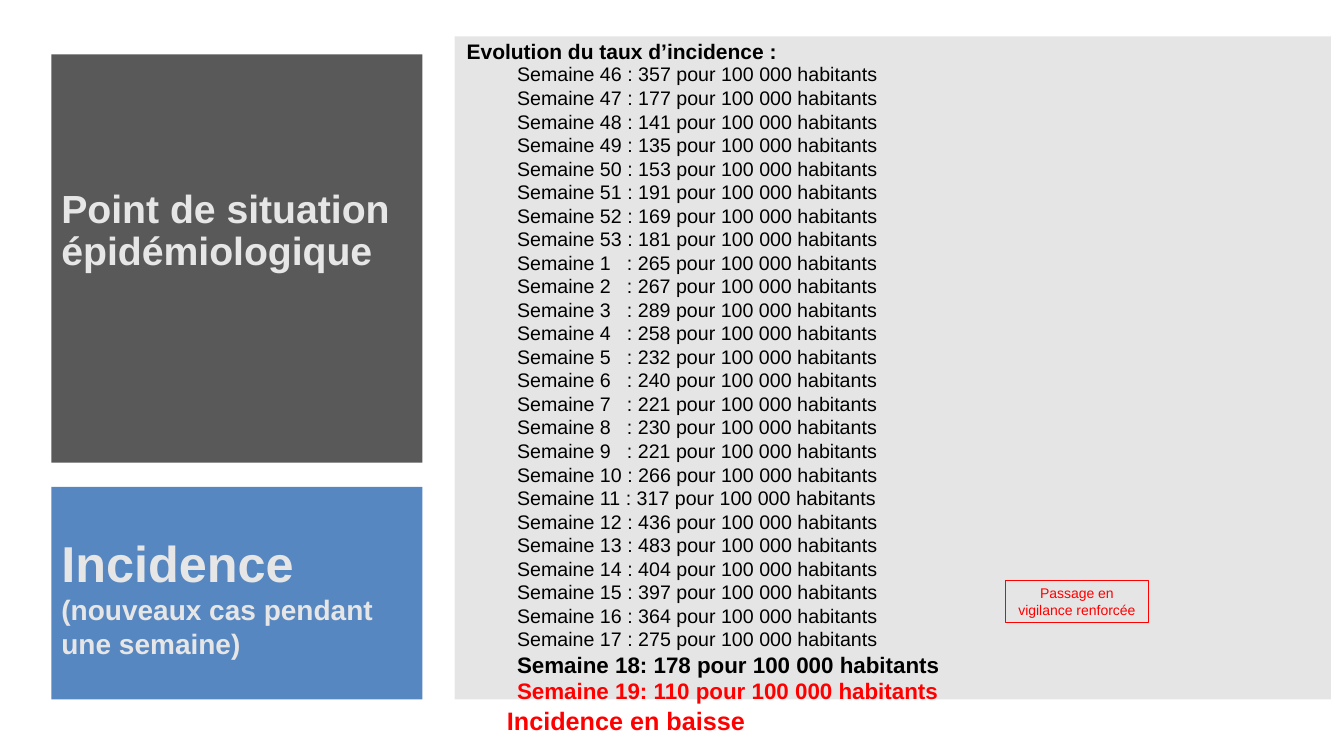
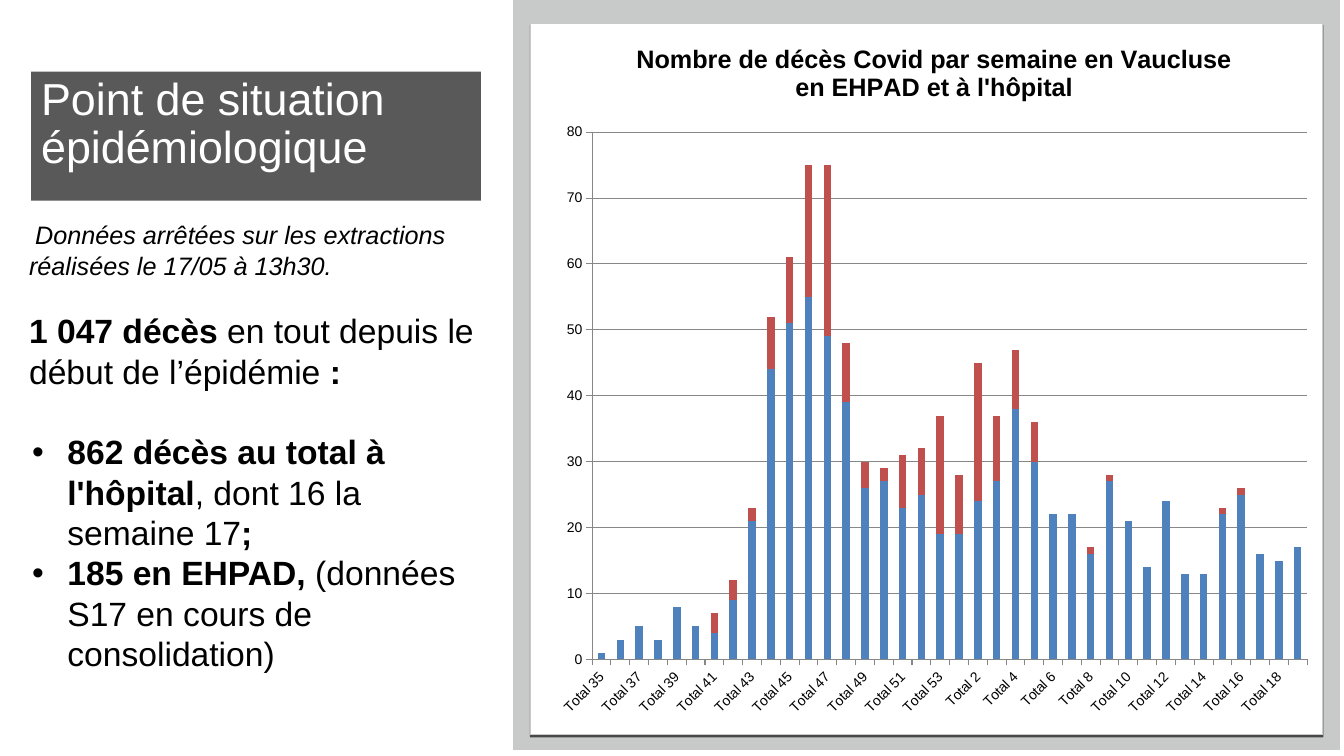
from dataclasses import dataclass

from lxml import etree
from pptx import Presentation
from pptx.chart.data import CategoryChartData
from pptx.dml.color import RGBColor
from pptx.enum.chart import XL_CHART_TYPE as ChartType, XL_TICK_MARK as TickMark
from pptx.enum.shapes import MSO_SHAPE as Preset
from pptx.enum.text import MSO_ANCHOR as Anchor, PP_ALIGN as Align
from pptx.oxml import parse_xml
from pptx.oxml.ns import nsdecls, qn
from pptx.util import Inches, Pt


@dataclass(frozen=True)
class Theme:
    font: str = "Arial"
    black: str = "000000"
    white: str = "FFFFFF"
    dark: str = "595959"
    pale: str = "E7E6E6"
    blue: str = "4F81BD"
    brick: str = "C0504D"
    red: str = "FF0000"
    gray: str = "808080"
    frame: str = "C8CACA"
    axis: str = "878787"
    huge: int = 36
    title: int = 32
    heading: int = 28
    body: int = 24
    subtitle: int = 20
    note: int = 18
    strong: int = 16
    lead: int = 15
    item: int = 14
    small: int = 10
    leading: float = 1.2
    title_spacing: float = 0.9


THEME = Theme()
TITLE = "Point de situation épidémiologique"

# Weekly incidence per 100 000 inhabitants
INCIDENCE = {
    46: 357, 47: 177, 48: 141, 49: 135, 50: 153, 51: 191, 52: 169, 53: 181,
    1: 265, 2: 267, 3: 289, 4: 258, 5: 232, 6: 240, 7: 221, 8: 230, 9: 221,
    10: 266, 11: 317, 12: 436, 13: 483, 14: 404, 15: 397, 16: 364, 17: 275,
    18: 178, 19: 110,
}
# Weekly deaths, from week 35 to week 19
WEEKS = [*range(35, 54), *range(1, 20)]
HOSPITAL = [1, 3, 5, 3, 8, 5, 4, 9, 21, 44, 51, 55, 49, 39, 26, 27, 23, 25, 19,
            19, 24, 27, 38, 30, 22, 22, 16, 27, 21, 14, 24, 13, 13, 22, 25, 16, 15, 17]
CARE_HOMES = {41: 3, 42: 3, 43: 2, 44: 8, 45: 10, 46: 20, 47: 26, 48: 9, 49: 4,
              50: 2, 51: 8, 52: 7, 53: 18, 1: 9, 2: 21, 3: 10, 4: 9, 5: 6,
              8: 1, 9: 1, 15: 1, 16: 1}


def color(code):
    return RGBColor.from_string(code)


def set_font(font, size, code=THEME.black, bold=None, italic=None):
    font.name, font.size = THEME.font, Pt(size)
    font.bold, font.italic = bold, italic
    font.color.rgb = color(code)


# Shapes and text
def add_panel(slide, place, fill=None, line=None, opacity=None, preset=Preset.RECTANGLE):
    panel = slide.shapes.add_shape(preset, *map(Inches, place))
    panel.shadow.inherit = False
    if fill:
        panel.fill.solid()
        panel.fill.fore_color.rgb = color(fill)
    else:
        panel.fill.background()
    if opacity:
        code = panel.fill._xPr.find(qn("a:solidFill"))[0]
        etree.SubElement(code, qn("a:alpha"), val=str(opacity * 1000))
    if line:
        panel.line.color.rgb = color(line)
        panel.line.width = Pt(0.75)
    else:
        panel.line.fill.background()
    return panel


def add_edge_shadow(panel):
    effects = panel._element.spPr.find(qn("a:effectLst"))
    effects.append(parse_xml(
        f'<a:outerShdw {nsdecls("a")} blurRad="0" dist="19050" dir="5400000" algn="t" '
        f'rotWithShape="0"><a:srgbClr val="{THEME.black}"><a:alpha val="63000"/>'
        '</a:srgbClr></a:outerShdw>'))


def add_box(slide, place, anchor=Anchor.TOP):
    box = slide.shapes.add_textbox(*map(Inches, place))
    return prepare_frame(box, anchor)


def prepare_frame(shape, anchor):
    frame = shape.text_frame
    frame.word_wrap = True
    frame.vertical_anchor = anchor
    return frame


def next_paragraph(frame):
    first = frame.paragraphs[0]
    return frame.add_paragraph() if first.runs else first


def write(frame, text, size, code=THEME.black, bold=None, italic=None,
          align=Align.LEFT, spacing=None):
    para = next_paragraph(frame)
    para.alignment = align
    para.line_spacing = spacing
    para.add_run().text = text
    set_font(para.font, size, code, bold, italic)
    return para


def write_mixed(frame, parts, before=0, bullet=False):
    """Parts alternate between bold and regular, starting with bold."""
    para = next_paragraph(frame)
    para.alignment = Align.LEFT
    para.line_spacing = Pt(THEME.body * THEME.leading)
    para.space_before = Pt(before)
    if bullet:
        add_bullet(para)
    set_font(para.font, THEME.body)
    for index, text in enumerate(parts):
        span = para.add_run()
        span.text = text
        span.font.bold = index % 2 == 0


def set_indent(para, left, first):
    props = para._p.get_or_add_pPr()
    props.set("marL", str(Inches(left)))
    props.set("indent", str(Inches(first)))
    return props


def add_bullet(para):
    props = set_indent(para, 0.38, -0.35)
    code = etree.SubElement(props, qn("a:buClr"))
    etree.SubElement(code, qn("a:srgbClr"), val=THEME.black)
    etree.SubElement(props, qn("a:buFont"), typeface=THEME.font)
    etree.SubElement(props, qn("a:buChar"), char="•")


def add_tab(para, position):
    tabs = etree.SubElement(para._p.get_or_add_pPr(), qn("a:tabLst"))
    etree.SubElement(tabs, qn("a:tab"), pos=str(Inches(position)), algn="l")


# Weekly list
def write_week(frame, week, rate):
    latest = week in (18, 19)
    gap = "" if latest else "\t" if week < 10 else " "
    para = next_paragraph(frame)
    para.alignment = Align.LEFT
    if not latest:
        para.line_spacing = Pt(THEME.item * THEME.leading)
    if gap == "\t":
        add_tab(para, 1.09)
    para.add_run().text = f"Semaine {week}{gap}: {rate} pour 100 000 habitants"
    set_font(para.font, THEME.strong if latest else THEME.item,
             THEME.red if week == 19 else THEME.black, latest)


# Chart
def style_axis(axis):
    set_font(axis.tick_labels.font, THEME.small)
    axis.major_tick_mark = TickMark.OUTSIDE
    axis.minor_tick_mark = TickMark.NONE
    style_line(axis.format.line)


def style_line(line):
    line.color.rgb = color(THEME.axis)
    line.width = Pt(0.75)


def place_plot(chart, left, top, width, height):
    area = chart._chartSpace.chart.plotArea
    for old in area.findall(qn("c:layout")):
        area.remove(old)
    values = "".join(f'<c:{key} val="{value}"/>' for key, value in
                     zip("xywh", (left, top, width, height)))
    area.insert(0, parse_xml(
        f'<c:layout {nsdecls("c")}><c:manualLayout><c:layoutTarget val="inner"/>'
        f'<c:xMode val="edge"/><c:yMode val="edge"/>{values}</c:manualLayout></c:layout>'))
    fill = parse_xml(
        f'<c:spPr {nsdecls("c", "a")}><a:solidFill><a:srgbClr val="{THEME.white}"/>'
        '</a:solidFill></c:spPr>')
    area.append(fill)


def add_deaths_chart(slide, place):
    data = CategoryChartData()
    data.categories = [f"Total {week}" for week in WEEKS]
    data.add_series("Series 1", HOSPITAL)
    # Care-home values are keyed by week; weeks without deaths stay empty
    data.add_series("Series 2", [CARE_HOMES.get(week) for week in WEEKS])
    chart = slide.shapes.add_chart(
        ChartType.COLUMN_STACKED, *map(Inches, place), data).chart
    set_font(chart.font, THEME.small)
    chart.has_legend = False
    chart.has_title = True
    write(chart.chart_title.text_frame,
          "Nombre de décès Covid par semaine en Vaucluse en EHPAD et à l'hôpital",
          THEME.note, bold=True, align=Align.CENTER)
    chart.chart_title.include_in_layout = False

    plot = chart.plots[0]
    plot.gap_width, plot.overlap, plot.vary_by_categories = 150, 100, False
    for series, code in zip(plot.series, (THEME.blue, THEME.brick)):
        series.format.fill.solid()
        series.format.fill.fore_color.rgb = color(code)
        series.invert_if_negative = False

    for axis in (chart.category_axis, chart.value_axis):
        style_axis(axis)
    labels = chart.category_axis._element.find(qn("c:txPr"))
    labels.find(qn("a:bodyPr")).set("rot", "-2700000")
    values = chart.value_axis
    values.minimum_scale, values.maximum_scale, values.major_unit = 0, 80, 10
    values.tick_labels.number_format = "General"
    values.tick_labels.number_format_is_linked = False
    style_line(values.major_gridlines.format.line)
    place_plot(chart, 0.06, 0.16, 0.92, 0.74)


# Slides
def build_incidence(slide):
    left, width = 0.51, 3.68
    add_panel(slide, (left, 0.54, width, 4.05), THEME.dark)
    title = add_box(slide, (left, 0.8, width, 3), Anchor.MIDDLE)
    write(title, TITLE, THEME.heading, THEME.pale, True, spacing=THEME.title_spacing)
    add_panel(slide, (left, 4.83, width, 2.11), THEME.blue, opacity=95)
    add_panel(slide, (4.51, 0.36, 8.69, 6.58), THEME.gray, opacity=20)

    # Weekly rates
    lead = add_box(slide, (4.53, 0.33, 7.11, 0.34))
    write(lead, "Evolution du taux d’incidence :", THEME.lead, bold=True)
    rates = add_box(slide, (5.03, 0.57, 6.61, 6.4))
    for week, rate in INCIDENCE.items():
        write_week(rates, week, rate)

    # Topic label
    topic = add_box(slide, (left, 5.23, width, 1.31))
    para = write(topic, "Incidence ", THEME.huge, THEME.pale, True)
    span = para.add_run()
    span.text = "(nouveaux cas pendant une semaine)"
    span.font.size = Pt(THEME.subtitle)

    # Alert and conclusion
    alert = add_panel(slide, (9.97, 5.76, 1.42, 0.42), line=THEME.red)
    write(prepare_frame(alert, Anchor.MIDDLE), "Passage en vigilance renforcée",
          THEME.small, THEME.red, align=Align.CENTER)
    trend = add_box(slide, (4.93, 6.95, 8.3, 0.43))
    write(trend, "Incidence en baisse", THEME.note, THEME.red, True)


def build_deaths(slide):
    add_panel(slide, (5.09, 0, 8.2, 7.44), THEME.frame)
    card = add_panel(slide, (5.26, 0.23, 7.86, 7.06), THEME.white, THEME.frame,
                     preset=Preset.ROUNDED_RECTANGLE)
    card.adjustments[0] = 0
    add_edge_shadow(card)

    # Key figures
    figures = add_box(slide, (0.19, 2.13, 4.72, 5.14))
    source = write(figures, "Données arrêtées sur les extractions réalisées le 17/05 à 13h30.",
                   THEME.note, italic=True, spacing=Pt(THEME.note * THEME.leading))
    set_indent(source, 0, 0.06)
    write_mixed(figures, ["1 047 décès ", "en tout depuis le début de l’épidémie ", ":"],
                before=THEME.note * THEME.leading)
    write_mixed(figures, ["862 décès au total à l'hôpital", ", dont 16 la semaine 17", ";"],
                before=THEME.body * THEME.leading, bullet=True)
    write_mixed(figures, ["185 en EHPAD, ", "(données S17 en cours de consolidation)"],
                bullet=True)

    title = add_panel(slide, (0.31, 0.71, 4.46, 1.28), THEME.dark)
    write(prepare_frame(title, Anchor.TOP), TITLE, THEME.title, THEME.white,
          spacing=THEME.title_spacing)
    add_deaths_chart(slide, (5.41, 0.18, 7.71, 7.07))


def main():
    deck = Presentation()
    deck.slide_width, deck.slide_height = Inches(13.33), Inches(7.5)
    for build in (build_incidence, build_deaths):
        build(deck.slides.add_slide(deck.slide_layouts[6]))
    deck.save("out.pptx")


if __name__ == "__main__":
    main()
